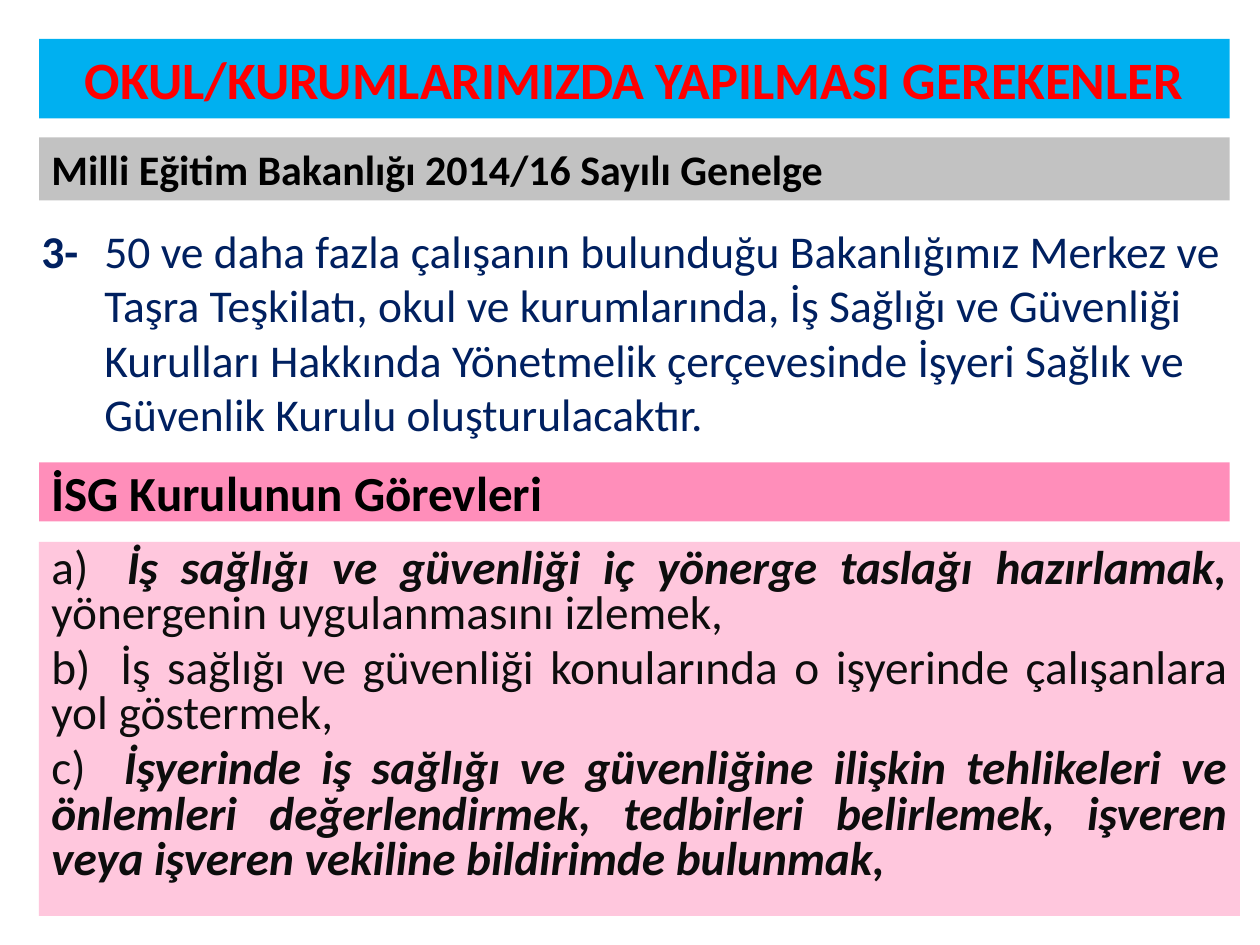
from pptx import Presentation
from pptx.dml.color import RGBColor
from pptx.enum.shapes import MSO_SHAPE as Shape
from pptx.enum.text import MSO_ANCHOR as Anchor, PP_ALIGN as Align
from pptx.util import Pt


def color(value):
    return RGBColor.from_string(value)


class SlideBuilder:
    """Holds the text style and the current slide, and adds its elements."""

    font_name = "Calibri"
    left = 22.3
    width = 680.4

    def __init__(self, slide):
        self.slide = slide

    def fill_text(self, shape, paragraphs, size, ink, anchor=Anchor.TOP, **layout):
        frame = shape.text_frame
        frame.word_wrap = True
        frame.vertical_anchor = anchor
        for index, runs in enumerate(paragraphs):
            paragraph = frame.add_paragraph() if index else frame.paragraphs[0]
            formats = {"alignment": Align.LEFT, "space_before": Pt(0.2 * size if index else 0)}
            for name, value in (formats | layout).items():
                setattr(paragraph, name, value)
            for text, style in runs:
                run = paragraph.add_run()
                run.text = text
                run.font.color.rgb = color(ink)
                for name, value in ({"name": self.font_name, "size": Pt(size)} | style).items():
                    setattr(run.font, name, value)

    def panel(self, top, height, fill, paragraphs, size, ink, width=width, **layout):
        shape = self.slide.shapes.add_shape(
            Shape.RECTANGLE, Pt(self.left), Pt(top), Pt(width), Pt(height))
        shape.shadow.inherit = False
        shape.fill.solid()
        shape.fill.fore_color.rgb = color(fill)
        shape.line.fill.background()
        self.fill_text(shape, paragraphs, size, ink, **layout)

    def hanging_text(self, left, top, width, height, indent, paragraphs, size, ink):
        shape = self.slide.shapes.add_textbox(Pt(left), Pt(top), Pt(width), Pt(height))
        self.fill_text(shape, paragraphs, size, ink)
        for paragraph in shape.text_frame.paragraphs:
            properties = paragraph._p.get_or_add_pPr()
            for name, value in {"marL": Pt(indent), "indent": Pt(-indent)}.items():
                properties.set(name, str(int(value)))


PLAIN = {"bold": False, "italic": False}
BOLD = {"bold": True}
STRONG = {"bold": True, "italic": True}

RULE = [[
    ("3- \t", BOLD),
    ("50 ve daha fazla çalışanın bulunduğu Bakanlığımız Merkez ve Taşra Teşkilatı, "
     "okul ve kurumlarında, İş Sağlığı ve Güvenliği Kurulları Hakkında Yönetmelik "
     "çerçevesinde İşyeri Sağlık ve Güvenlik Kurulu oluşturulacaktır.", PLAIN),
]]
DUTIES = [
    [("a) \t", PLAIN),
     ("İş sağlığı ve güvenliği iç yönerge taslağı hazırlamak, ", STRONG),
     ("yönergenin uygulanmasını izlemek,", PLAIN)],
    [("b) \tİş sağlığı ve güvenliği konularında o işyerinde çalışanlara yol göstermek,", PLAIN)],
    [("c) \t", PLAIN),
     ("İşyerinde iş sağlığı ve güvenliğine ilişkin tehlikeleri ve önlemleri değerlendirmek, "
      "tedbirleri belirlemek, işveren veya işveren vekiline bildirimde bulunmak,", STRONG)],
]


def main():
    presentation = Presentation()
    presentation.slide_width, presentation.slide_height = Pt(720), Pt(540)
    builder = SlideBuilder(presentation.slides.add_slide(presentation.slide_layouts[6]))

    builder.panel(22.3, 45.4, "00B0F0", [[("OKUL/KURUMLARIMIZDA YAPILMASI GEREKENLER", BOLD)]],
                  30, "FF0000", anchor=Anchor.MIDDLE, alignment=Align.CENTER)
    builder.hanging_text(16.6, 123.8, 692, 129.6, 36, RULE, 26, "002060")
    builder.panel(78.5, 36, "C2C2C2",
                  [[("Milli Eğitim Bakanlığı 2014/16 Sayılı Genelge", BOLD)]], 24, "000000")
    builder.panel(264.2, 33.8, "FF8EBA", [[("İSG Kurulunun Görevleri", BOLD)]],
                  28, "000000", anchor=Anchor.MIDDLE)
    builder.panel(309.6, 213.8, "FFC7DD", DUTIES, 27, "0D0D0D", width=686.2,
                  alignment=Align.JUSTIFY, line_spacing=0.8)

    presentation.save("out.pptx")


if __name__ == "__main__":
    main()
